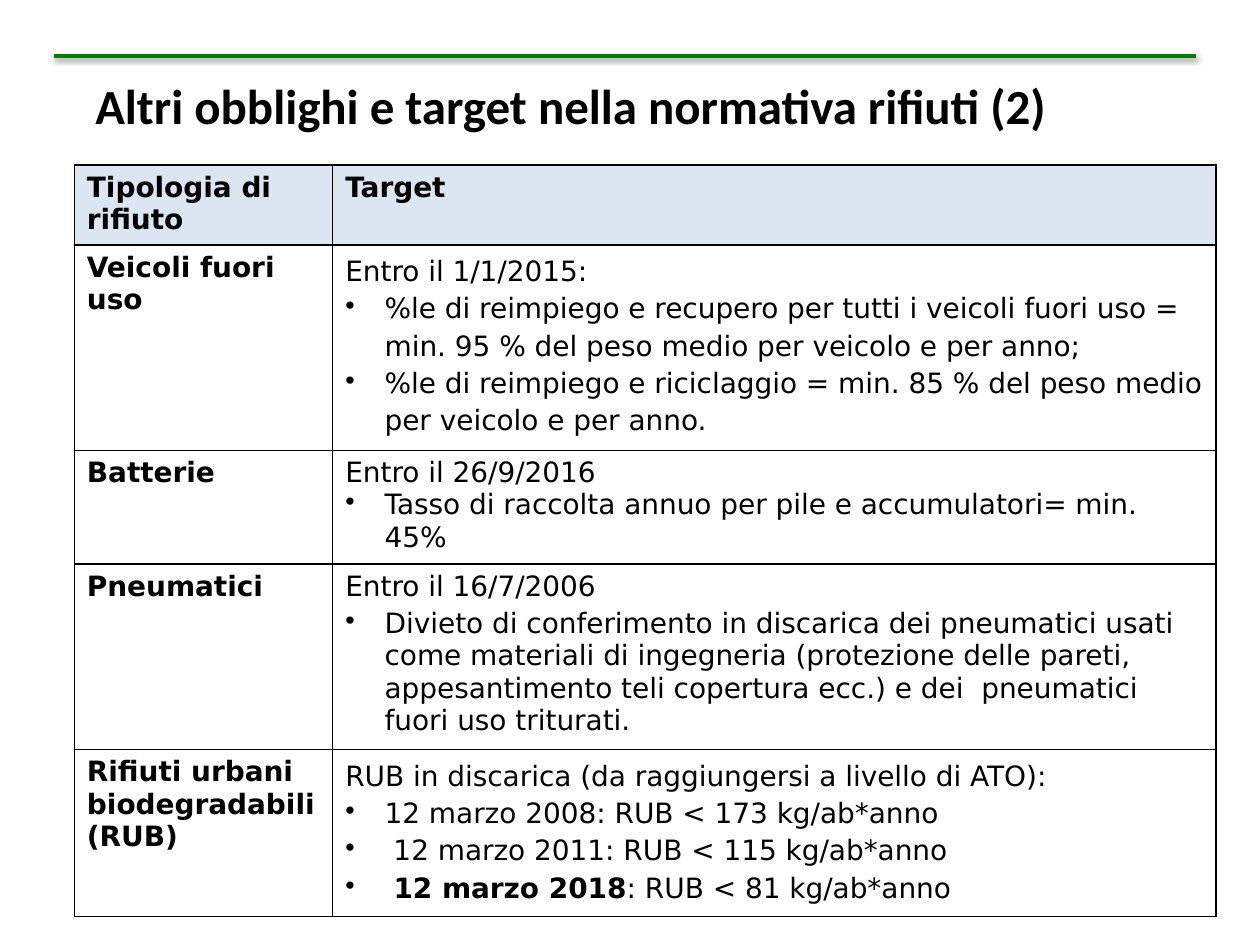
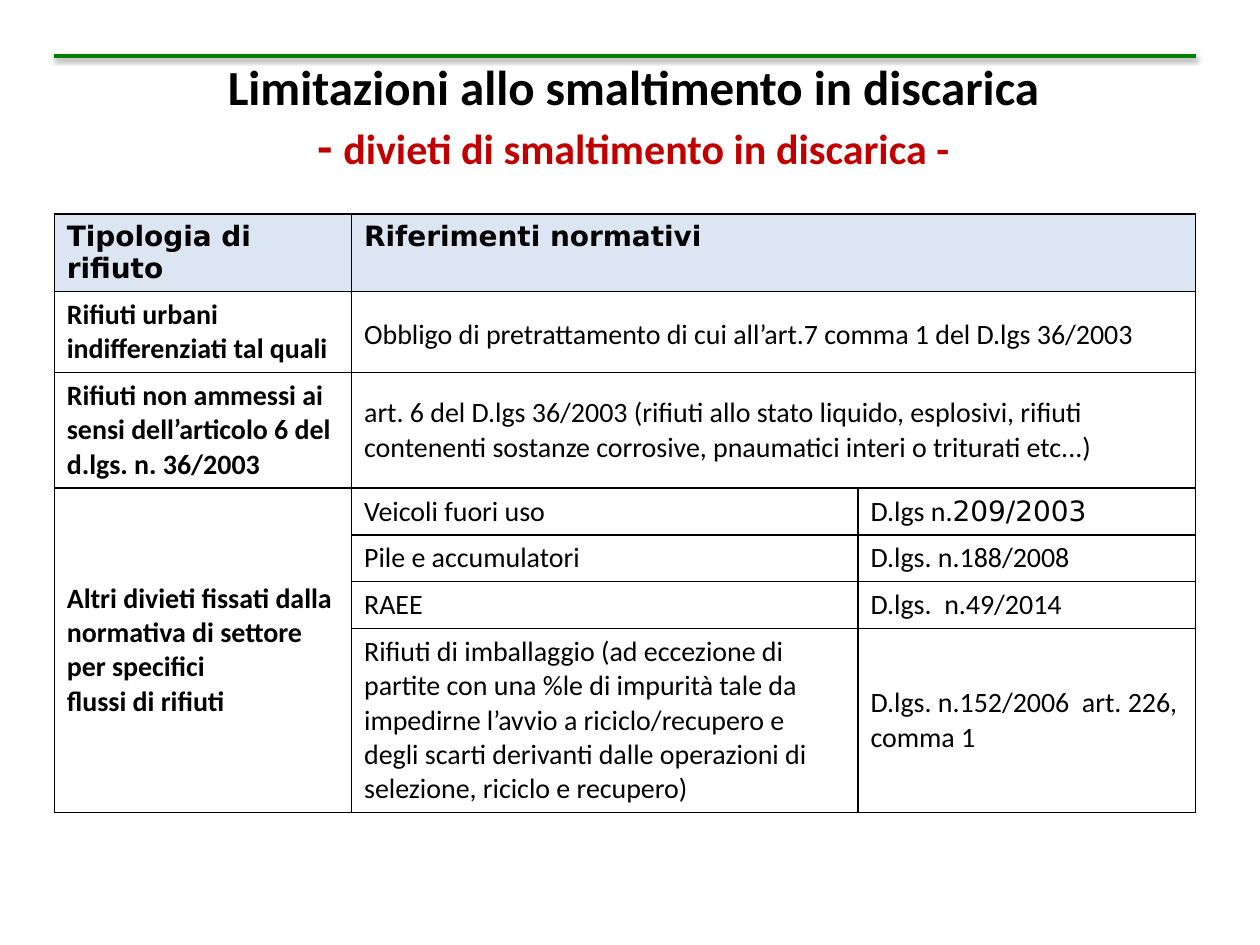
import dataclasses
from typing import Optional, Union

import pptx
import pptx.dml.color
import pptx.enum.shapes
import pptx.enum.text
import pptx.oxml
import pptx.oxml.ns
import pptx.util

Pt = pptx.util.Pt
Align = pptx.enum.text.PP_ALIGN
Anchor = pptx.enum.text.MSO_ANCHOR

# Shared look
BLACK, RED, GREEN, HEADER_BLUE = "000000", "C00000", "008000", "DCE6F2"
TITLE_FONT, TABLE_FONT = "Calibri", "DejaVu Sans"
TITLE_SIZE, SUBTITLE_SIZE, TABLE_SIZE = 28, 24, 16
RULE_LEFT, RULE_RIGHT, RULE_TOP = 31, 683.5, 32
BULLET_INDENT = 22.5
WIDE_SPACING = 1.15


@dataclasses.dataclass(frozen=True)
class Span:
    """A stretch of text; unset values come from its paragraph."""
    text: str
    font: Optional[str] = None
    size: Optional[float] = None
    bold: Optional[bool] = None
    color: Optional[str] = None
    line_break: bool = False


@dataclasses.dataclass(frozen=True)
class Para:
    content: Union[str, tuple[Span, ...]]
    font: str = TABLE_FONT
    size: float = TABLE_SIZE
    bold: bool = False
    align: Align = Align.LEFT
    line_spacing: Optional[float] = None
    space_around: Optional[float] = None
    bullet: bool = False


@dataclasses.dataclass(frozen=True)
class Cell:
    paras: tuple[Para, ...]
    anchor: Anchor = Anchor.TOP
    fill: Optional[str] = None
    row_span: int = 1
    column_span: int = 1


@dataclasses.dataclass(frozen=True)
class Grid:
    left: float
    top: float
    columns: tuple[float, ...]
    rows: tuple[float, ...]
    cells: tuple[tuple[Optional[Cell], ...], ...]


def rgb(color: str) -> pptx.dml.color.RGBColor:
    return pptx.dml.color.RGBColor.from_string(color)


def add_xml(parent, xml: str) -> None:
    """Append one DrawingML element."""
    tag, rest = xml[1:].split(" ", 1)
    parent.append(pptx.oxml.parse_xml(f"<{tag} {pptx.oxml.ns.nsdecls('a')} {rest}"))


# Text
def style_font(font, name: Optional[str], size: Optional[float],
               bold: Optional[bool], color: Optional[str]) -> None:
    if name:
        font.name = name
    if size:
        font.size = Pt(size)
    if bold is not None:
        font.bold = bold
    if color:
        font.color.rgb = rgb(color)


def write_para(paragraph, para: Para) -> None:
    paragraph.alignment = para.align
    if para.line_spacing:
        paragraph.line_spacing = para.line_spacing
    if para.space_around:
        paragraph.space_before = paragraph.space_after = Pt(para.space_around)
    if para.bullet:
        properties = paragraph._p.get_or_add_pPr()
        properties.set("marL", str(Pt(BULLET_INDENT)))
        properties.set("indent", str(-Pt(BULLET_INDENT)))
        add_xml(properties, '<a:buChar char="•"/>')
    style_font(paragraph.font, para.font, para.size, para.bold, BLACK)
    spans = (Span(para.content),) if isinstance(para.content, str) else para.content
    for span in spans:
        run = paragraph.add_run()
        run.text = span.text
        style_font(run.font, span.font, span.size, span.bold, span.color)
        if span.line_break:
            paragraph.add_line_break()


def write_paras(frame, paras: tuple[Para, ...]) -> None:
    for index, para in enumerate(paras):
        write_para(frame.add_paragraph() if index else frame.paragraphs[0], para)


# Slide parts
def add_rule(page) -> None:
    """Green line with a soft shadow across the top."""
    rule = page.shapes.add_connector(
        pptx.enum.shapes.MSO_CONNECTOR.STRAIGHT,
        Pt(RULE_LEFT), Pt(RULE_TOP), Pt(RULE_RIGHT), Pt(RULE_TOP))
    rule.line.color.rgb = rgb(GREEN)
    rule.line.width = Pt(2)
    add_xml(rule._element.spPr,
            f'<a:effectLst ><a:outerShdw blurRad="{Pt(3.1)}" dist="{Pt(1.6)}" '
            f'dir="5400000" rotWithShape="0"><a:srgbClr val="{BLACK}">'
            '<a:alpha val="38000"/></a:srgbClr></a:outerShdw></a:effectLst>')


def add_title(page, left: float, top: float, width: float,
              content: Union[str, tuple[Span, ...]]) -> None:
    box = page.shapes.add_textbox(Pt(left), Pt(top), Pt(width), Pt(90))
    box.text_frame.word_wrap = True
    box.text_frame.vertical_anchor = Anchor.MIDDLE
    write_paras(box.text_frame, (
        Para(content, TITLE_FONT, TITLE_SIZE, bold=True, align=Align.CENTER),))


def add_borders(cell) -> None:
    properties = cell._tc.get_or_add_tcPr()
    for side in "LRTB":
        add_xml(properties,
                f'<a:ln{side} w="{Pt(1)}"><a:solidFill><a:srgbClr val="{BLACK}"/>'
                f'</a:solidFill></a:ln{side}>')


def add_grid(page, grid: Grid) -> None:
    table = page.shapes.add_table(
        len(grid.rows), len(grid.columns), Pt(grid.left), Pt(grid.top),
        Pt(sum(grid.columns)), Pt(sum(grid.rows))).table
    table.first_row = table.horz_banding = False
    for column, width in zip(table.columns, grid.columns):
        column.width = Pt(width)
    for row, height in zip(table.rows, grid.rows):
        row.height = Pt(height)
    for row_index, row_cells in enumerate(grid.cells):
        for column_index, content in enumerate(row_cells):
            cell = table.cell(row_index, column_index)
            add_borders(cell)
            if content is None or content.fill is None:
                cell.fill.background()
            else:
                cell.fill.solid()
                cell.fill.fore_color.rgb = rgb(content.fill)
            if content is None:
                continue
            cell.vertical_anchor = content.anchor
            write_paras(cell.text_frame, content.paras)
            if content.row_span * content.column_span > 1:
                cell.merge(table.cell(row_index + content.row_span - 1,
                                      column_index + content.column_span - 1))


# Kinds of cell
def header(text: str, column_span: int = 1) -> Cell:
    return Cell((Para(text, bold=True),), fill=HEADER_BLUE, column_span=column_span)


def waste(text: str) -> Cell:
    return Cell((Para(text, bold=True),))


def target(deadline: str, *measures: Union[str, tuple[Span, ...]],
           align: Align = Align.LEFT, line_spacing: Optional[float] = None,
           space_around: Optional[float] = None) -> Cell:
    """A deadline followed by bulleted measures."""
    return Cell((
        Para(deadline, align=align, line_spacing=line_spacing),
        *(Para(measure, align=align, line_spacing=line_spacing,
               space_around=space_around, bullet=True) for measure in measures)))


def ban(*texts: Union[str, tuple[Span, ...]], bold: bool = False,
        align: Align = Align.LEFT, line_spacing: Optional[float] = None,
        row_span: int = 1, column_span: int = 1) -> Cell:
    """A vertically centred cell of the landfill ban table."""
    paras = tuple(Para(text, TITLE_FONT, bold=bold, align=align,
                       line_spacing=line_spacing) for text in texts)
    return Cell(paras, Anchor.MIDDLE, row_span=row_span, column_span=column_span)


TARGETS = Grid(42.5, 94.3, (147.6, 504.7), (44, 113, 62.5, 102.5, 92), (
    (header("Tipologia di rifiuto"), header("Target")),
    (waste("Veicoli fuori uso"), target(
        "Entro il 1/1/2015:",
        "%le di reimpiego e recupero per tutti i veicoli fuori uso = "
        "min. 95 % del peso medio per veicolo e per anno;",
        "%le di reimpiego e riciclaggio = min. 85 % del peso medio "
        "per veicolo e per anno.",
        line_spacing=WIDE_SPACING)),
    (waste("Batterie"), target(
        "Entro il 26/9/2016",
        "Tasso di raccolta annuo per pile e accumulatori= min. 45%")),
    (waste("Pneumatici"), target(
        "Entro il 16/7/2006",
        "Divieto di conferimento in discarica dei pneumatici usati come "
        "materiali di ingegneria (protezione delle pareti, appesantimento "
        "teli copertura ecc.) e dei  pneumatici fuori uso triturati.",
        space_around=3)),
    (waste("Rifiuti urbani biodegradabili (RUB)"), target(
        "RUB in discarica (da raggiungersi a livello di ATO):",
        "12 marzo 2008: RUB < 173 kg/ab*anno",
        " 12 marzo 2011: RUB < 115 kg/ab*anno",
        (Span(" "), Span("12 marzo 2018", bold=True),
         Span(": RUB < 81 kg/ab*anno")),
        align=Align.JUSTIFY, line_spacing=WIDE_SPACING)),
))

BANS = Grid(RULE_LEFT, 122.4, (169.9, 289.4, 193), (44, 46, 65.5, 26.8, 26.8, 26.8, 104.5), (
    (header("Tipologia di rifiuto"),
     header("Riferimenti normativi", column_span=2), None),
    (ban("Rifiuti urbani indifferenziati tal quali", bold=True),
     ban("Obbligo di pretrattamento di cui all’art.7 comma 1 del D.lgs 36/2003",
         line_spacing=WIDE_SPACING, column_span=2), None),
    (ban("Rifiuti non ammessi ai sensi dell’articolo 6 del d.lgs. n. 36/2003", bold=True),
     ban("art. 6 del D.lgs 36/2003 (rifiuti allo stato liquido, esplosivi, rifiuti "
         "contenenti sostanze corrosive, pnaumatici interi o triturati etc...)",
         column_span=2), None),
    (ban("Altri divieti fissati dalla normativa di settore per specifici",
         "flussi di rifiuti", bold=True, row_span=4),
     ban("Veicoli fuori uso"),
     ban((Span("D.lgs n."), Span("209/2003", font=TABLE_FONT)), align=Align.JUSTIFY)),
    (None, ban("Pile e accumulatori"), ban("D.lgs. n.188/2008")),
    (None, ban("RAEE"), ban("D.lgs.  n.49/2014")),
    (None,
     ban("Rifiuti di imballaggio (ad eccezione di partite con una %le di impurità "
         "tale da impedirne l’avvio a riciclo/recupero e degli scarti derivanti "
         "dalle operazioni di selezione, riciclo e recupero)"),
     ban("D.lgs. n.152/2006  art. 226, comma 1")),
))


def main() -> None:
    deck = pptx.Presentation()
    deck.slide_width, deck.slide_height = Pt(720), Pt(540)
    blank = deck.slide_layouts[6]

    # Targets by type of waste
    page = deck.slides.add_slide(blank)
    add_rule(page)
    add_title(page, 2, 15, 648, "Altri obblighi e target nella normativa rifiuti (2)")
    add_grid(page, TARGETS)

    # Landfill bans
    page = deck.slides.add_slide(blank)
    add_rule(page)
    add_grid(page, BANS)
    add_title(page, 5, 21, 714, (
        Span("Limitazioni allo smaltimento in discarica", line_break=True),
        Span("- ", color=RED),
        Span("divieti di smaltimento in discarica -", size=SUBTITLE_SIZE, color=RED)))

    deck.save("out.pptx")


if __name__ == "__main__":
    main()
